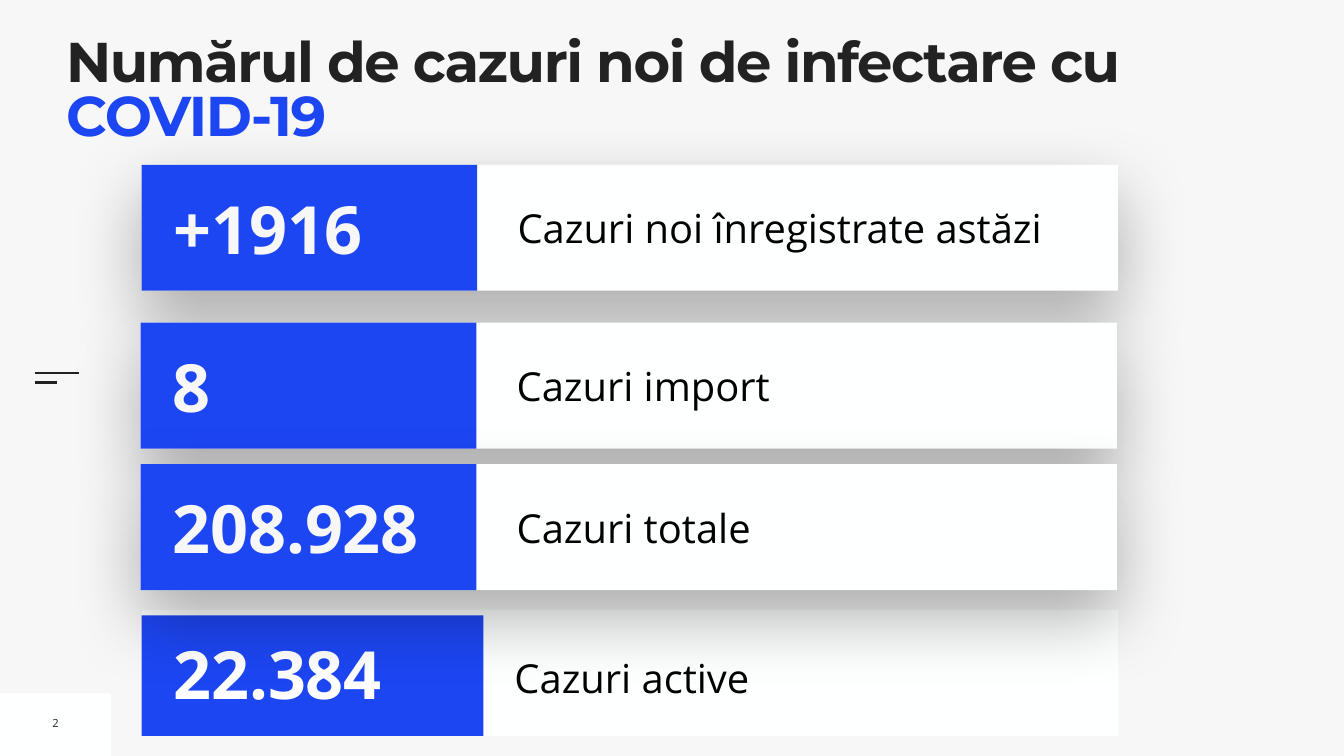
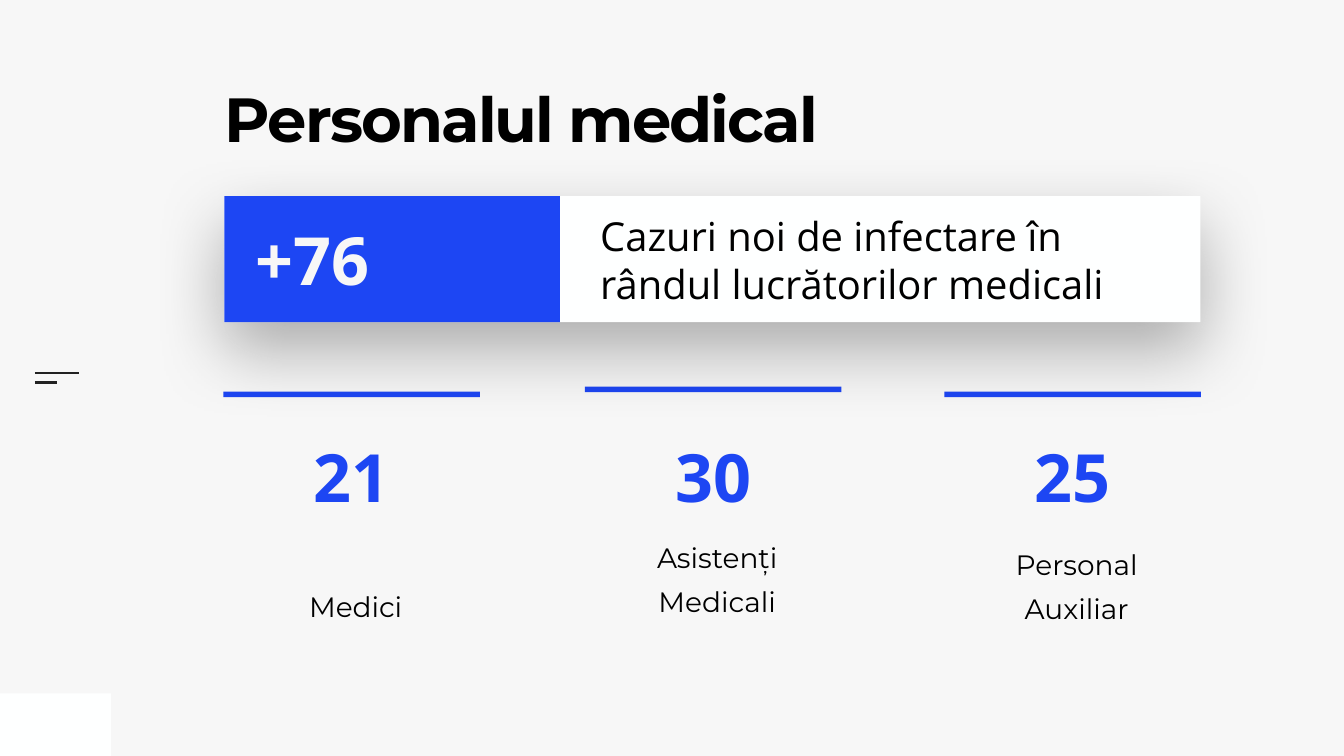
from dataclasses import dataclass

from lxml.etree import SubElement
from pptx import Presentation
from pptx.dml.color import RGBColor
from pptx.enum.shapes import MSO_CONNECTOR, MSO_SHAPE
from pptx.enum.text import MSO_ANCHOR, MSO_AUTO_SIZE, PP_ALIGN
from pptx.oxml.ns import qn
from pptx.shapes.autoshape import Shape
from pptx.slide import Slide
from pptx.util import Pt

BLUE, WHITE, PALE = "1D46F3", "FEFFFF", "F7F7F7"
DARK, BLACK = "222222", "000000"
HEAD, BODY = "Montserrat", "Open Sans"
CARD_W, CARD_H = 1394.6, 180
COL_W, COL_H = 366.5, 393


@dataclass
class Box:
    x: float
    y: float
    w: float
    h: float

    def pts(self) -> tuple[Pt, Pt, Pt, Pt]:
        return Pt(self.x), Pt(self.y), Pt(self.w), Pt(self.h)


@dataclass
class Style:
    size: float
    color: str
    font: str = BODY
    bold: bool = False
    align: PP_ALIGN = PP_ALIGN.LEFT
    anchor: MSO_ANCHOR = MSO_ANCHOR.MIDDLE
    lead: float = 1.0
    before: float = 0
    track: float = 0
    pad: tuple[float, float, float, float] = (7.2, 7.2, 7.2, 7.2)


@dataclass
class Card:
    x: float
    y: float
    count: str
    label: str
    shade: bool = True
    band: float = 479.5
    inset: float = 0  # gap between the card's top and its blue band
    indent: float = 530
    lift: float = 0
    ink: str = PALE
    lead: float = 1.0
    before: float = 0


@dataclass
class Column:
    x: float
    bar: float
    panel: float
    count: str
    label: str


def rgb(code: str) -> RGBColor:
    return RGBColor.from_string(code)


def write(shape: Shape, parts: list[tuple[str, str]], style: Style) -> None:
    """Fill a shape with one paragraph of (text, colour) runs."""
    frame = shape.text_frame
    frame.word_wrap = True
    frame.auto_size = MSO_AUTO_SIZE.NONE
    frame.vertical_anchor = style.anchor
    (frame.margin_left, frame.margin_top,
     frame.margin_right, frame.margin_bottom) = map(Pt, style.pad)
    para = frame.paragraphs[0]
    para.alignment = style.align
    para.line_spacing = style.lead
    para.space_before = Pt(style.before)
    for text, color in parts:
        run = para.add_run()
        run.text = text
        font = run.font
        font.name, font.size, font.bold = style.font, Pt(style.size), style.bold
        font.color.rgb = rgb(color)
        if style.track:
            font._element.set("spc", str(round(style.track * 100)))


def add_text(slide: Slide, box: Box, text: str, style: Style) -> None:
    write(slide.shapes.add_textbox(*box.pts()), [(text, style.color)], style)


def add_rect(slide: Slide, box: Box, color: str) -> Shape:
    rect = slide.shapes.add_shape(MSO_SHAPE.RECTANGLE, *box.pts())
    rect.shadow.inherit = False
    rect.fill.solid()
    rect.fill.fore_color.rgb = rgb(color)
    rect.line.fill.background()
    return rect


def add_shade(shape: Shape) -> None:
    """Give a shape a soft shadow below it."""
    effects = shape._element.spPr.find(qn("a:effectLst"))
    outer = SubElement(effects, qn("a:outerShdw"), blurRad=str(Pt(100)),
                       dist=str(Pt(40)), dir="5400000", rotWithShape="0")
    tint = SubElement(outer, qn("a:srgbClr"), val=BLACK)
    SubElement(tint, qn("a:alpha"), val="30000")


def add_line(slide: Slide, x: float, y: float, end: float) -> None:
    line = slide.shapes.add_connector(
        MSO_CONNECTOR.STRAIGHT, Pt(x), Pt(y), Pt(end), Pt(y))
    line.line.color.rgb = rgb(DARK)
    line.line.width = Pt(3)
    SubElement(line._element.spPr, qn("a:effectLst"))


def add_slide(deck: Presentation, box: Box, parts: list[tuple[str, str]],
              size: float, track: float) -> Slide:
    """Start a slide with its title, corner block and side dashes."""
    slide = deck.slides.add_slide(deck.slide_layouts.get_by_name("Title Only"))
    title = slide.shapes.title
    title.left, title.top, title.width, title.height = box.pts()
    write(title, parts, Style(size, DARK, HEAD, True, anchor=MSO_ANCHOR.TOP,
                              lead=0.8, track=track, pad=(0, 0, 0, 0)))
    add_rect(slide, Box(0, 990.7, 158.4, 89.3), WHITE)
    add_line(slide, 49.7, 533.5, 113)
    add_line(slide, 49.7, 546.5, 81.4)
    return slide


def add_card(slide: Slide, card: Card) -> None:
    base = add_rect(slide, Box(card.x, card.y, CARD_W, CARD_H), WHITE)
    if card.shade:
        add_shade(base)
    add_text(slide, Box(card.x + card.indent, card.y - card.lift, 847, CARD_H),
             card.label, Style(57, BLACK, lead=card.lead, before=card.before))
    add_rect(slide, Box(card.x, card.y + card.inset, card.band,
                        CARD_H - card.inset), BLUE)
    add_text(slide, Box(card.x + 38.2, card.y + 25.2, 434, 129.6),
             card.count, Style(95, card.ink, bold=True))


def add_column(slide: Slide, col: Column) -> None:
    panel = add_rect(slide, Box(col.x, col.panel, COL_W, COL_H), PALE)
    write(panel, [(col.label, BLACK)],
          Style(40, BLACK, HEAD, align=PP_ALIGN.CENTER,
                anchor=MSO_ANCHOR.BOTTOM, lead=1.3, before=20,
                pad=(39.6, 51, 28, 62.6)))
    add_rect(slide, Box(col.x, col.bar, COL_W, 8), BLUE)
    add_text(slide, Box(col.x, 615, COL_W, 129.6), col.count,
             Style(95, BLUE, bold=True, align=PP_ALIGN.CENTER))


CASES = [
    Card(202.3, 871.2, "22.384", "Cazuri active", shade=False, band=488.2,
         inset=8, indent=525.6, lift=3, ink="FFFFFF", lead=1.3, before=20),
    Card(202.3, 235.4, "+1916", "Cazuri noi înregistrate astăzi"),
    Card(201, 460.8, "8", "Cazuri import"),
    Card(201, 663.1, "208.928", "Cazuri totale"),
]
STAFF = Card(320.4, 280.3, "+76",
             "Cazuri noi de infectare în rândul lucrătorilor medicali")
ROLES = [
    Column(319, 559.4, 559.4, "21", "Medici"),
    Column(835.5, 552.2, 552.2, "30", "Asistenți Medicali"),
    Column(1349, 559.4, 562.3, "25", "Personal Auxiliar"),
]


def main() -> None:
    deck = Presentation()
    deck.slide_width, deck.slide_height = Pt(1920), Pt(1080)
    back = deck.slide_master.background.fill
    back.solid()
    back.fore_color.rgb = rgb(PALE)

    cases = add_slide(deck, Box(94.3, 56.2, 1723.7, 113.8),
                      [("Numărul de cazuri noi de infectare cu ", DARK),
                       ("COVID-19", BLUE)], 80, -2)
    add_text(cases, Box(67, 1014.5, 24.5, 36.7), "2",
             Style(16, DARK, align=PP_ALIGN.CENTER))
    for card in CASES:
        add_card(cases, card)

    staff = add_slide(deck, Box(321, 134.6, 936.7, 196.6),
                      [("Personalul medical", BLACK)], 89, -2.7)
    for col in ROLES:
        add_column(staff, col)
    add_card(staff, STAFF)

    deck.save("out.pptx")


if __name__ == "__main__":
    main()
